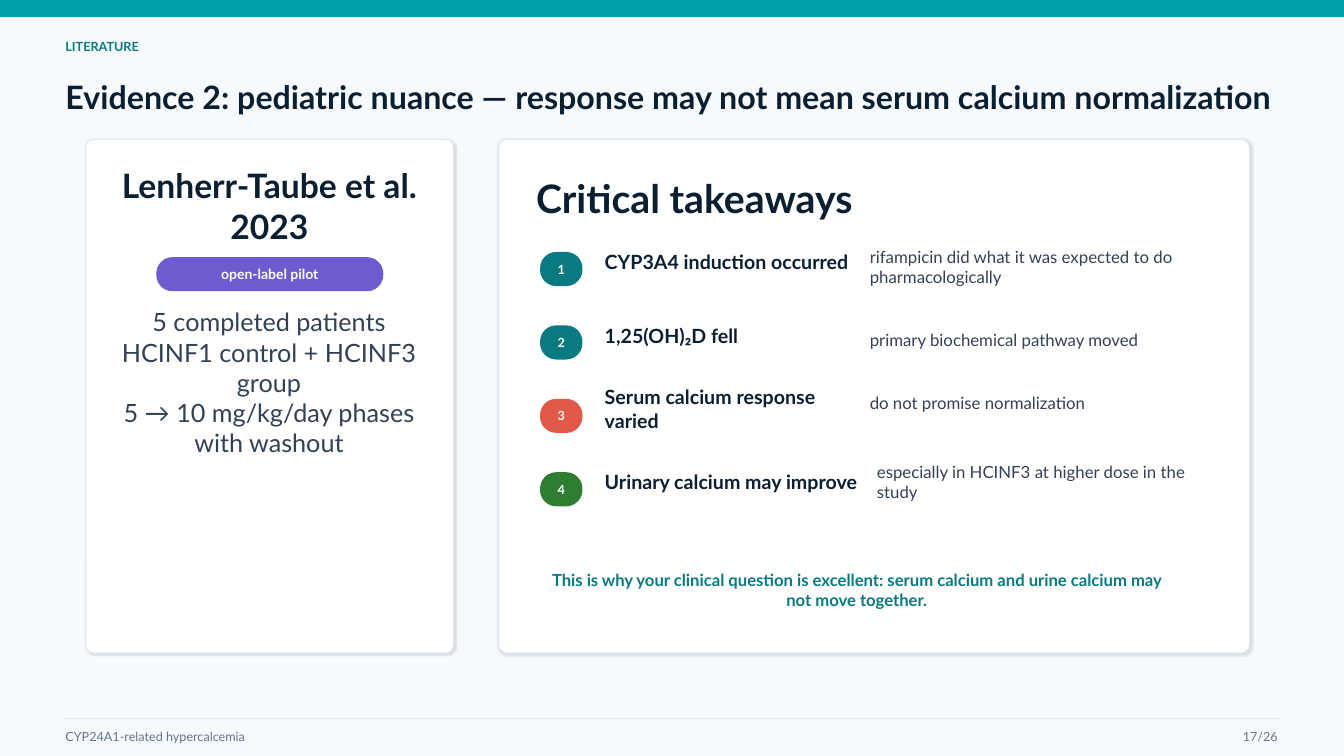
import pptx
import pptx.dml.color
import pptx.enum.shapes
import pptx.enum.text
import pptx.oxml
import pptx.oxml.ns
import pptx.util
from dataclasses import dataclass

Cm, Pt = pptx.util.Cm, pptx.util.Pt
Align = pptx.enum.text.PP_ALIGN
Shape = pptx.enum.shapes.MSO_SHAPE


@dataclass(frozen=True)
class Theme:
    font: str = "Lato"
    back: str = "F7FAFC"
    white: str = "FFFFFF"
    ink: str = "0B1F33"
    body: str = "334155"
    muted: str = "64748B"
    rule: str = "E2E8F0"
    bar: str = "00A0A8"
    teal: str = "087A80"
    violet: str = "6D5BD0"
    red: str = "E05A47"
    green: str = "2E7D32"
    tiny: float = 9
    tag: float = 10
    small: float = 12
    close: float = 11.9
    term: float = 14
    large: float = 18
    title: float = 23
    name: float = 24
    head: float = 28


def rgb(code):
    return pptx.dml.color.RGBColor.from_string(code)


def drop(shape):
    """Give a shape a soft shadow to the lower right."""
    shape._element.spPr.append(pptx.oxml.parse_xml(
        f'<a:effectLst {pptx.oxml.ns.nsdecls("a")}>'
        f'<a:outerShdw blurRad="{Pt(1.5)}" dist="{Pt(0.7)}" dir="2700000" '
        'algn="ctr" rotWithShape="0"><a:srgbClr val="000000">'
        '<a:alpha val="12000"/></a:srgbClr></a:outerShdw></a:effectLst>'))


class Deck:
    def __init__(self, theme):
        self.theme = theme
        self.prs = pptx.Presentation()
        self.prs.slide_width, self.prs.slide_height = Cm(33.87), Cm(19.05)
        self.slide = self.prs.slides.add_slide(self.prs.slide_layouts[5])
        fill = self.slide.background.fill
        fill.solid()
        fill.fore_color.rgb = rgb(theme.back)

    def label(self, shape, lines, size, color, bold=False, align=Align.LEFT):
        """Set the text of a shape, one paragraph a line."""
        frame = shape.text_frame
        frame.word_wrap = True
        frame.auto_size = pptx.enum.text.MSO_AUTO_SIZE.NONE
        frame.vertical_anchor = pptx.enum.text.MSO_ANCHOR.MIDDLE
        frame.margin_left = frame.margin_right = 0
        frame.margin_top = frame.margin_bottom = 0
        for i, line in enumerate(lines):
            para = frame.add_paragraph() if i else frame.paragraphs[0]
            para.alignment = align
            run = para.add_run()
            run.text = line
            font = run.font
            font.name, font.size, font.bold = self.theme.font, Pt(size), bold
            font.color.rgb = rgb(color)

    def title(self, box, line):
        shape = self.slide.shapes.title
        shape.left, shape.top, shape.width, shape.height = map(Cm, box)
        self.label(shape, [line], self.theme.title, self.theme.ink, True)

    def text(self, box, lines, size, color, **style):
        shape = self.slide.shapes.add_textbox(*map(Cm, box))
        self.label(shape, lines, size, color, **style)

    def block(self, box, color, round=0):
        """Add a filled box; round is the corner radius in cm."""
        kind = Shape.ROUNDED_RECTANGLE if round else Shape.RECTANGLE
        shape = self.slide.shapes.add_shape(kind, *map(Cm, box))
        if round:
            shape.adjustments[0] = round / min(box[2:])
        shape.fill.solid()
        shape.fill.fore_color.rgb = rgb(color)
        shape.line.fill.background()
        shape.shadow.inherit = False
        return shape

    def card(self, box):
        shape = self.block(box, self.theme.white, 0.2)
        shape.line.color.rgb = rgb(self.theme.rule)
        shape.line.width = Pt(1)
        shape.shadow.inherit = True
        drop(shape)

    def pill(self, box, line, size, color):
        shape = self.block(box, color, 0.41)
        self.label(shape, [line], size, self.theme.white, True, Align.CENTER)

    def rule(self, left, right, top):
        line = self.slide.shapes.add_connector(
            pptx.enum.shapes.MSO_CONNECTOR.STRAIGHT,
            Cm(left), Cm(top), Cm(right), Cm(top))
        line.line.color.rgb = rgb(self.theme.rule)
        line.line.width = Pt(1)
        line._element.spPr.append(pptx.oxml.parse_xml(
            f'<a:effectLst {pptx.oxml.ns.nsdecls("a")}/>'))


def frame(deck):
    """Add the top bar, title and footer."""
    t = deck.theme
    deck.block((0, 0, 33.87, 0.43), t.bar)
    deck.text((1.65, 0.86, 6.6, 0.64), ["LITERATURE"], t.tiny, t.teal, bold=True)
    deck.title((1.65, 1.7, 30.56, 1.47),
               "Evidence 2: pediatric nuance — response may not mean "
               "serum calcium normalization")
    deck.rule(1.65, 32.26, 18.11)
    deck.text((1.65, 18.34, 14.73, 0.46), ["CYP24A1-related hypercalcemia"],
              t.tiny, t.muted)
    deck.text((30.68, 18.34, 1.52, 0.46), ["17/26"], t.tiny, t.muted,
              align=Align.RIGHT)


def study(deck):
    t = deck.theme
    deck.card((2.16, 3.51, 9.27, 12.95))
    deck.text((2.79, 4.52, 8, 1.32), ["Lenherr-Taube et al.", "2023"],
              t.name, t.ink, bold=True, align=Align.CENTER)
    deck.pill((3.94, 6.48, 5.72, 0.86), "open-label pilot", t.tag, t.violet)
    deck.text((2.74, 7.92, 8.08, 3.43),
              ["5 completed patients", "HCINF1 control + HCINF3 group",
               "5 → 10 mg/kg/day phases", "with washout"],
              t.large, t.body, align=Align.CENTER)


def points(deck):
    t = deck.theme
    deck.card((12.57, 3.51, 18.92, 12.95))
    deck.text((13.51, 4.57, 17.15, 0.81), ["Critical takeaways"],
              t.head, t.ink, bold=True)
    # colour, term, note, left of note, shift of note from its row
    rows = [
        (t.teal, "CYP3A4 induction occurred",
         "rifampicin did what it was expected to do pharmacologically", 21.92, 0),
        (t.teal, "1,25(OH)₂D fell", "primary biochemical pathway moved", 21.92, 0),
        (t.red, "Serum calcium response varied",
         "do not promise normalization", 21.92, -0.28),
        (t.green, "Urinary calcium may improve",
         "especially in HCINF3 at higher dose in the study", 22.1, -0.13),
    ]
    for i, (color, term, note, left, shift) in enumerate(rows):
        top = 6.32 + 1.85 * i
        deck.pill((13.61, top + 0.03, 1.07, 0.86), str(i + 1), t.tiny, color)
        deck.text((15.24, top, 6.73, 0.56), [term], t.term, t.ink, bold=True)
        deck.text((left, top + shift, 8, 0.81), [note], t.small, t.body)
    deck.text((13.59, 14.43, 16, 0.89),
              ["This is why your clinical question is excellent: serum calcium "
               "and urine calcium may not move together."],
              t.close, t.teal, bold=True, align=Align.CENTER)


def main():
    deck = Deck(Theme())
    frame(deck)
    study(deck)
    points(deck)
    deck.prs.save("out.pptx")


if __name__ == "__main__":
    main()
